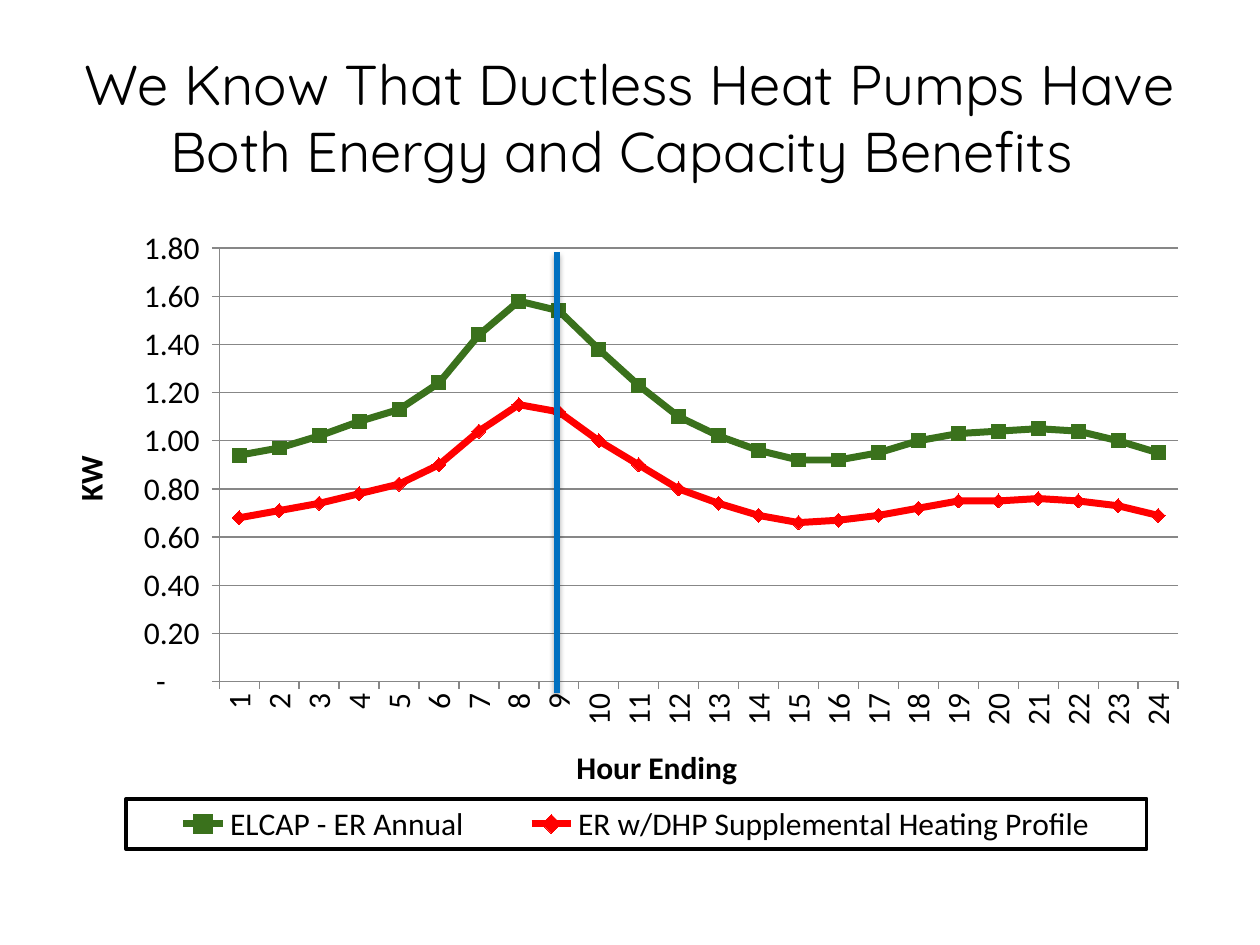
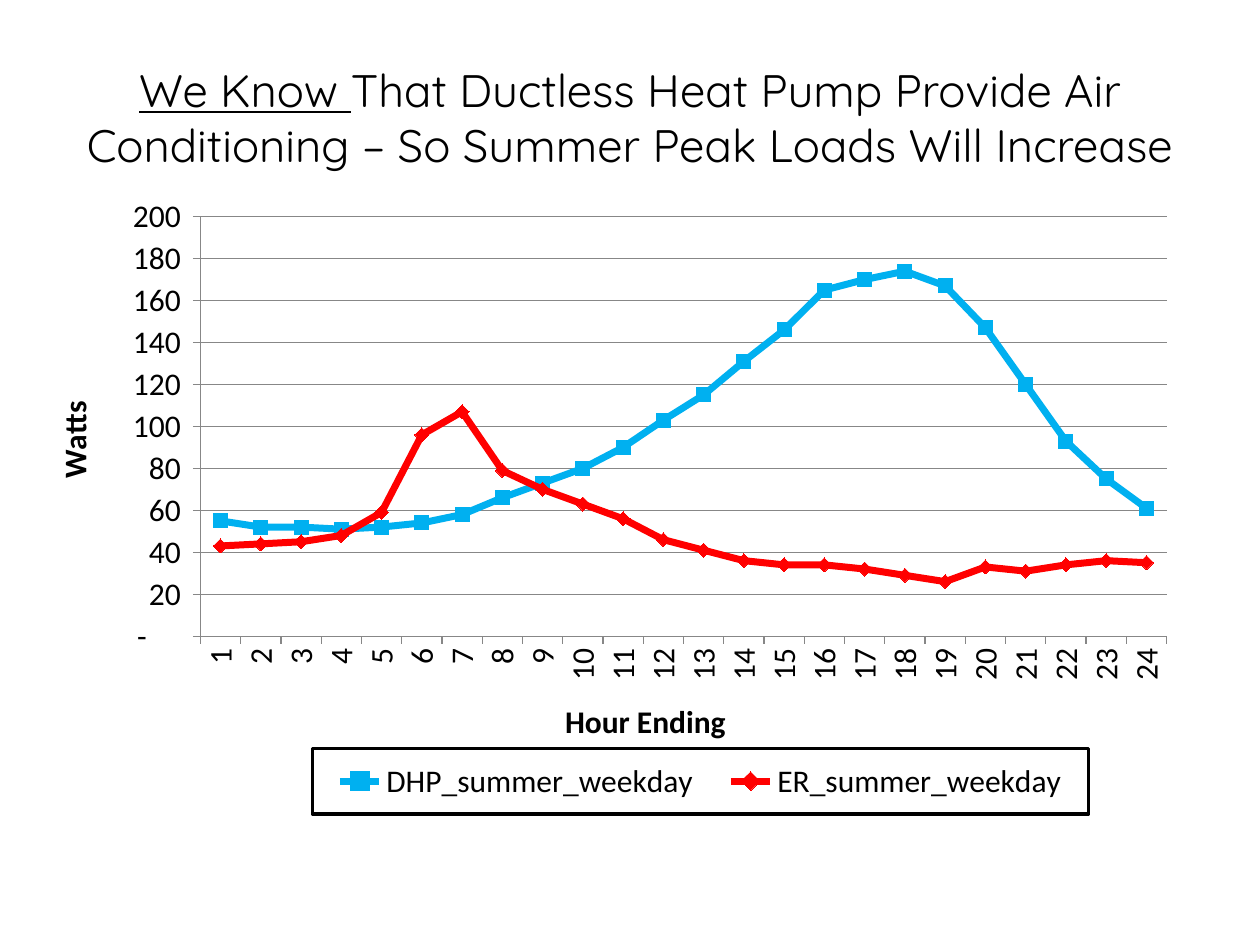
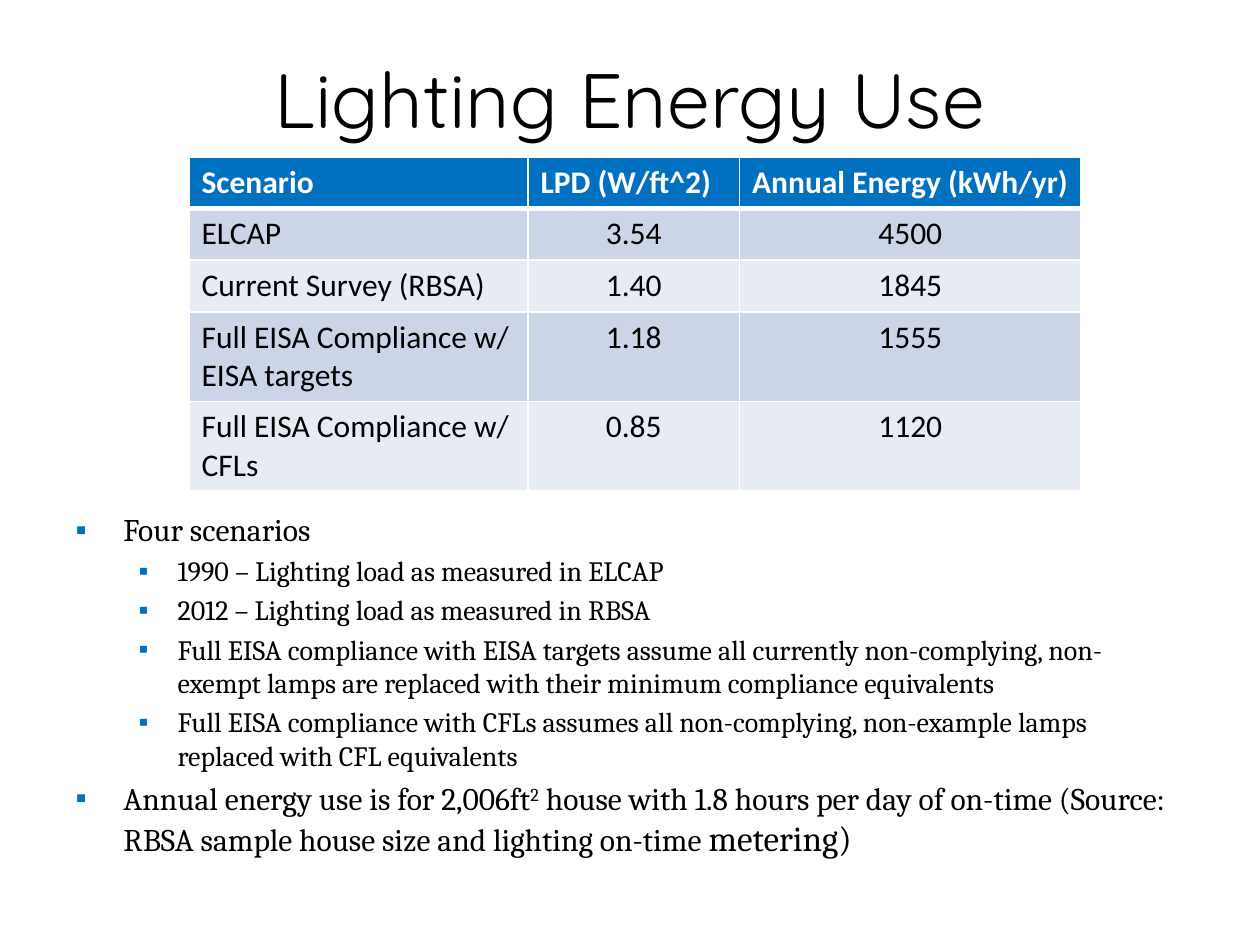
from dataclasses import dataclass
from itertools import cycle

from lxml import etree
from pptx import Presentation
from pptx import util as u
from pptx.chart.data import CategoryChartData
from pptx.dml.color import RGBColor
from pptx.enum import chart as ch, shapes, text
from pptx.oxml import parse_xml
from pptx.oxml.ns import nsdecls, qn


@dataclass(frozen=True)
class Theme:
    black: str = "000000"
    white: str = "FFFFFF"
    blue: str = "0070C0"
    sky: str = "00B0F0"
    green: str = "3A711C"
    red: str = "FF0000"
    grid: str = "878787"
    bands: tuple = ("CCD5E8", "E7EBF4")
    title_font: str = "Quicksand"
    body_font: str = "Cambria"
    data_font: str = "Calibri"
    data_size: int = 18
    level_sizes: tuple = (18, 16)


T = Theme()
HOURS = [str(h) for h in range(1, 25)]

# Content: boxes are (left, top, width, height) in inches;
# the parts of a chart are measured from the chart's corner
CHARTS = [
    dict(
        title=[("We Know That Ductless Heat Pumps Have Both Energy and Capacity Benefits ", {})],
        title_box=(0.5, 0.3, 9, 1.25), title_size=32,
        box=(0.5, 1.75, 9, 5.25), plot=(1.24, 0.22, 7.61, 3.44),
        legend=(0.5, 4.59, 8.1, 0.4),
        x_title=("Hour Ending", (4.03, 4.12)), y_title=("KW", (0, 1.82)),
        top=1.8, step=0.2, fmt='_(* #,##0.00_);_(* \\(#,##0.00\\);_(* "-"??_);_(@_)',
        marker_line=(4.42, 2, 5.5),
        series=[
            ("ELCAP - ER Annual", T.green, "SQUARE",
             [0.94, 0.97, 1.02, 1.08, 1.13, 1.24, 1.44, 1.58, 1.54, 1.38, 1.23, 1.1,
              1.02, 0.96, 0.92, 0.92, 0.95, 1, 1.03, 1.04, 1.05, 1.04, 1, 0.95]),
            ("ER w/DHP Supplemental Heating Profile", T.red, "DIAMOND",
             [0.68, 0.71, 0.74, 0.78, 0.82, 0.9, 1.04, 1.15, 1.12, 1, 0.9, 0.8,
              0.74, 0.69, 0.66, 0.67, 0.69, 0.72, 0.75, 0.75, 0.76, 0.75, 0.73, 0.69]),
        ],
    ),
    dict(
        title=[("We Know ", dict(underline=True)),
               ("That Ductless Heat Pump Provide Air Conditioning – "
                "So Summer Peak Loads Will Increase", {})],
        title_box=(0.17, 0.3, 9.67, 1.25), title_size=26,
        box=(0.33, 1.5, 9.08, 5.33), plot=(1.26, 0.22, 7.67, 3.33),
        legend=(2.15, 4.44, 6.16, 0.52),
        x_title=("Hour Ending", (4.11, 4.01)), y_title=("Watts", (0.04, 1.64)),
        top=200, step=20, fmt='_(* #,##0_);_(* \\(#,##0\\);_(* "-"??_);_(@_)',
        marker_line=None,
        series=[
            ("DHP_summer_weekday", T.sky, "SQUARE",
             [55, 52, 52, 51, 52, 54, 58, 66, 73, 80, 90, 103,
              115, 131, 146, 165, 170, 174, 167, 147, 120, 93, 75, 61]),
            ("ER_summer_weekday", T.red, "DIAMOND",
             [43, 44, 45, 48, 59, 96, 107, 79, 70, 63, 56, 46,
              41, 36, 34, 34, 32, 29, 26, 33, 31, 34, 36, 35]),
        ],
    ),
]

LIGHTING = dict(
    title=[("Lighting Energy Use", {})], title_box=(0.5, 0.3, 9, 0.95), title_size=44,
    table_at=(1.5, 1.25), cols=(2.69, 1.68, 2.71), rows=(0.4, 0.41, 0.41, 0.7, 0.7),
    table=[
        ("Scenario", "LPD (W/ft^2)", "Annual Energy (kWh/yr)"),
        ("ELCAP", "3.54", "4500"),
        ("Current Survey (RBSA)", "1.40", "1845"),
        ("Full EISA Compliance w/ EISA targets", "1.18", "1555"),
        ("Full EISA Compliance w/ CFLs", "0.85", "1120"),
    ],
    body_box=(0.5, 4, 9, 2.92),
    body=[
        (0, [("Four scenarios", {})]),
        (1, [("1990 – Lighting load as measured in ELCAP", {})]),
        (1, [("2012 – Lighting load as measured in RBSA", {})]),
        (1, [("Full EISA compliance with EISA targets assume all currently non-complying, "
              "non-exempt lamps are replaced with their minimum compliance equivalents", {})]),
        (1, [("Full EISA compliance with CFLs assumes all non-complying, non-example lamps "
              "replaced with CFL equivalents", {})]),
        (0, [("Annual energy use is for 2,006ft", {}), ("2", dict(base=30)),
             (" house with 1.8 hours per day of on-time (Source: RBSA sample house size "
              "and lighting on-time ", {}), ("metering)", dict(size=20))]),
    ],
)
INDENTS = ((0.38, -0.38), (0.81, -0.31))  # left margin and hanging indent by level


# Helpers
def rgb(value):
    return RGBColor.from_string(value)


def place(sp, box):
    sp.left, sp.top, sp.width, sp.height = (u.Inches(v) for v in box)


def style(font, face=T.data_font, size=T.data_size, color=T.black, bold=False, underline=None):
    font.name, font.size, font.bold = face, u.Pt(size), bold
    font.color.rgb = rgb(color)
    if underline:
        font.underline = True


def add_run(p, words, base=None, **fmt):
    r = p.add_run()
    r.text = words
    style(r.font, **fmt)
    if base:
        r.font._element.set("baseline", str(base * 1000))


def add_slide(prs, layout, data):
    s = prs.slides.add_slide(prs.slide_layouts[layout])
    sp = s.shapes.title
    place(sp, data["title_box"])
    tf = sp.text_frame
    tf.auto_size, tf.vertical_anchor = text.MSO_AUTO_SIZE.NONE, text.MSO_ANCHOR.MIDDLE
    p = tf.paragraphs[0]
    p.alignment = text.PP_ALIGN.CENTER
    for words, fmt in data["title"]:
        add_run(p, words, face=T.title_font, size=data["title_size"], **fmt)
    return s


def set_layout(el, index, box, lengths, inner=False):
    """Place a chart part by lengths x, y and perhaps w, h, as shares of the chart's box."""
    for old in el.findall(qn("c:layout")):
        el.remove(old)
    target = '<c:layoutTarget val="inner"/>' if inner else ""
    modes = "".join(f'<c:{n}Mode val="edge"/>' for n in "xy")
    values = "".join(f'<c:{n} val="{v / full:.4f}"/>'
                     for n, v, full in zip("xywh", lengths, cycle(box[2:])))
    el.insert(index, parse_xml(f'<c:layout {nsdecls("c")}><c:manualLayout>{target}{modes}'
                               f'{values}</c:manualLayout></c:layout>'))


# Charts
def format_axis(axis, box, title, rotate_title=False):
    words, corner = title
    axis.major_tick_mark = ch.XL_TICK_MARK.OUTSIDE
    axis.minor_tick_mark = ch.XL_TICK_MARK.NONE
    axis.format.line.color.rgb = rgb(T.grid)
    style(axis.tick_labels.font)
    add_run(axis.axis_title.text_frame.paragraphs[0], words, bold=True)
    el = axis.axis_title._element
    if rotate_title:
        body = el.find(".//" + qn("a:bodyPr"))
        body.set("rot", "-5400000")
        body.set("vert", "horz")
    set_layout(el, 1, box, corner)


def add_line_chart(s, data):
    cd = CategoryChartData()
    cd.categories = HOURS
    for name, _, _, values in data["series"]:
        cd.add_series(name, values)
    box = data["box"]
    chart = s.shapes.add_chart(ch.XL_CHART_TYPE.LINE_MARKERS,
                               *(u.Inches(v) for v in box), cd).chart
    chart.has_title = False
    style(chart.font)
    plot = chart.plots[0]
    plot.vary_by_categories = False
    set_layout(chart._chartSpace.chart.plotArea, 0, box, data["plot"], inner=True)

    for line, (_, color, marker, _) in zip(plot.series, data["series"]):
        line.smooth = False
        line.format.line.color.rgb = rgb(color)
        line.format.line.width = u.Pt(4)
        line.marker.style = ch.XL_MARKER_STYLE[marker]
        line.marker.size = 8
        line.marker.format.fill.solid()
        line.marker.format.fill.fore_color.rgb = rgb(color)
        line.marker.format.line.color.rgb = rgb(color)

    hours, values = chart.category_axis, chart.value_axis
    format_axis(hours, box, data["x_title"])
    hours._element.find(qn("c:txPr")).find(qn("a:bodyPr")).set("rot", "-5400000")
    format_axis(values, box, data["y_title"], rotate_title=True)
    values.minimum_scale, values.maximum_scale = 0, data["top"]
    values.major_unit = data["step"]
    values.major_gridlines.format.line.color.rgb = rgb(T.grid)
    values.tick_labels.number_format = data["fmt"]
    values.tick_labels.number_format_is_linked = False

    # Boxed legend
    chart.has_legend = True
    legend = chart.legend
    legend.position = ch.XL_LEGEND_POSITION.BOTTOM
    legend.include_in_layout = False
    style(legend.font)
    set_layout(legend._element, 1, box, data["legend"])
    legend._element.find(qn("c:txPr")).addprevious(parse_xml(
        f'<c:spPr {nsdecls("c", "a")}><a:ln w="{u.Pt(2)}"><a:solidFill>'
        f'<a:srgbClr val="{T.black}"/></a:solidFill></a:ln></c:spPr>'))


def add_hour_line(s, x, top, bottom):
    x, top, bottom = (u.Inches(v) for v in (x, top, bottom))
    sp = s.shapes.add_connector(shapes.MSO_CONNECTOR.STRAIGHT, x, bottom, x, top)
    sp.line.color.rgb = rgb(T.blue)
    sp.line.width = u.Pt(3)
    sp._element.spPr.append(parse_xml(
        f'<a:effectLst {nsdecls("a")}><a:outerShdw blurRad="{u.Pt(3.1)}" dist="{u.Pt(1.8)}" '
        f'dir="5400000" rotWithShape="0"><a:srgbClr val="{T.black}"><a:alpha val="35000"/>'
        f'</a:srgbClr></a:outerShdw></a:effectLst>'))


# Table and list
def set_borders(cell, **widths):
    tcPr = cell._tc.get_or_add_tcPr()
    for i, (side, width) in enumerate(widths.items()):
        tcPr.insert(i, parse_xml(
            f'<a:ln{side} {nsdecls("a")} w="{u.Pt(width)}"><a:solidFill>'
            f'<a:srgbClr val="{T.white}"/></a:solidFill></a:ln{side}>'))


def add_scenarios(s, data):
    size = sum(data["cols"]), sum(data["rows"])
    box = (u.Inches(v) for v in (*data["table_at"], *size))
    table = s.shapes.add_table(len(data["rows"]), len(data["cols"]), *box).table
    for col, width in zip(table.columns, data["cols"]):
        col.width = u.Inches(width)
    for i, (row, height) in enumerate(zip(table.rows, data["rows"])):
        row.height = u.Inches(height)
        head = i == 0
        for j, cell in enumerate(row.cells):
            cell.fill.solid()
            cell.fill.fore_color.rgb = rgb(T.blue if head else T.bands[(i - 1) % 2])
            set_borders(cell, L=1, R=1, T=3 if i == 1 else 1, B=3 if head else 1)
            p = cell.text_frame.paragraphs[0]
            if j and not head:
                p.alignment = text.PP_ALIGN.CENTER
            add_run(p, data["table"][i][j], color=T.white if head else T.black, bold=head)


def add_bullet(p, level):
    pPr = p._p.get_or_add_pPr()
    left, hang = INDENTS[level]
    pPr.set("marL", str(u.Inches(left)))
    pPr.set("indent", str(u.Inches(hang)))
    color = etree.SubElement(pPr, qn("a:buClr"))
    etree.SubElement(color, qn("a:srgbClr"), val=T.blue)
    etree.SubElement(pPr, qn("a:buFont"), typeface="Arial")
    etree.SubElement(pPr, qn("a:buChar"), char="▪")


def add_notes_list(s, data):
    sp = s.placeholders[1]
    place(sp, data["body_box"])
    tf = sp.text_frame
    tf.auto_size = text.MSO_AUTO_SIZE.NONE
    for i, (level, runs) in enumerate(data["body"]):
        p = tf.add_paragraph() if i else tf.paragraphs[0]
        p.level = level
        add_bullet(p, level)
        if i == 0:
            p.space_before = u.Pt(0)
        for words, fmt in runs:
            add_run(p, words, **{"face": T.body_font, "size": T.level_sizes[level], **fmt})


def main():
    prs = Presentation()
    prs.slide_width, prs.slide_height = u.Inches(10), u.Inches(7.5)
    for data in CHARTS:
        s = add_slide(prs, 5, data)
        add_line_chart(s, data)
        if data["marker_line"]:
            add_hour_line(s, *data["marker_line"])
    s = add_slide(prs, 1, LIGHTING)
    add_scenarios(s, LIGHTING)
    add_notes_list(s, LIGHTING)
    prs.save("out.pptx")


if __name__ == "__main__":
    main()
